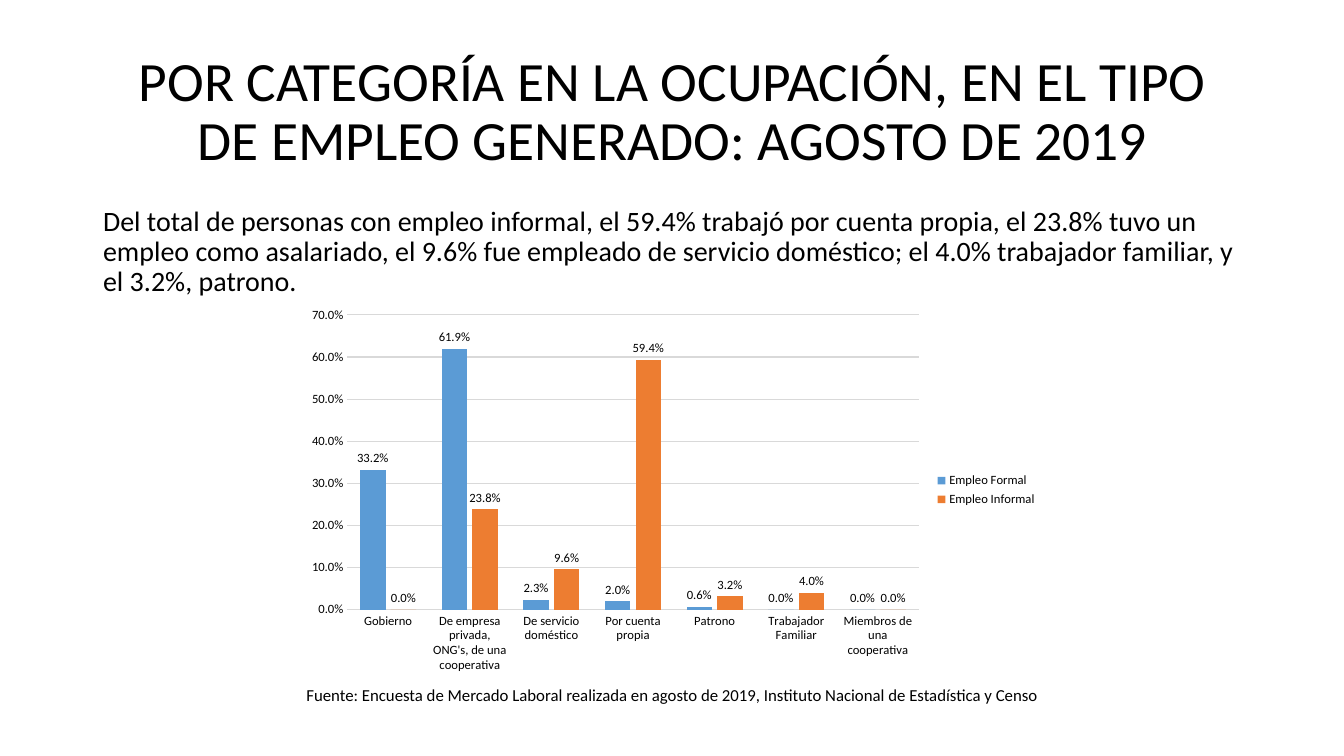
from pptx import Presentation
from pptx.chart.data import CategoryChartData
from pptx.dml.color import RGBColor
from pptx.enum.chart import XL_CHART_TYPE, XL_LABEL_POSITION, XL_LEGEND_POSITION, XL_TICK_MARK
from pptx.enum.text import MSO_ANCHOR, MSO_AUTO_SIZE, PP_ALIGN
from pptx.oxml.ns import qn
from pptx.util import Pt

COLUMNS = XL_CHART_TYPE.COLUMN_CLUSTERED
OUTSIDE = XL_LABEL_POSITION.OUTSIDE_END
RIGHT = XL_LEGEND_POSITION.RIGHT
NO_TICK = XL_TICK_MARK.NONE
TOP, MIDDLE = MSO_ANCHOR.TOP, MSO_ANCHOR.MIDDLE
NO_FIT = MSO_AUTO_SIZE.NONE
LEFT, CENTER = PP_ALIGN.LEFT, PP_ALIGN.CENTER

PX = 12192000 / 1344
THEME = {
    "font": "Calibri",
    "ink": RGBColor(0, 0, 0),
    "grid": RGBColor(0xD9, 0xD9, 0xD9),
    "bars": [RGBColor(0x5B, 0x9B, 0xD5), RGBColor(0xED, 0x7D, 0x31)],
    "title": 39.6, "body": 20, "source": 12, "chart": 10, "label": 9,
}
PERCENT = "0.0%"

GROUPS = ["Gobierno", "De empresa privada, ONG's, de una cooperativa",
          "De servicio doméstico", "Por cuenta propia", "Patrono",
          "Trabajador Familiar", "Miembros de una cooperativa"]
JOBS = {
    "Empleo Formal": [0.332, 0.619, 0.023, 0.02, 0.006, 0, 0],
    "Empleo Informal": [0, 0.238, 0.096, 0.594, 0.032, 0.04, 0],
}


def style(font, size):
    font.name, font.size = THEME["font"], Pt(THEME[size])
    font.color.rgb = THEME["ink"]


def assign(target, values):
    for name, value in values.items():
        setattr(target, name, value)


deck = Presentation()
assign(deck, {"slide_width": round(1344 * PX), "slide_height": round(756 * PX)})
slide = deck.slides.add_slide(deck.slide_layouts[1])
title, body = slide.shapes.title, slide.placeholders[1]
source = slide.shapes.add_textbox(0, 0, 0, 0)

# Text
texts = [
    (title, "title", (93, 40, 1159, 146), MIDDLE, True,
     {"alignment": CENTER, "line_spacing": 0.9, "space_before": Pt(0)},
     "POR CATEGORÍA EN LA OCUPACIÓN, EN EL TIPO DE EMPLEO GENERADO: AGOSTO DE 2019"),
    (body, "body", (93, 202, 1159, 480), TOP, True,
     {"alignment": LEFT, "line_spacing": 0.9, "space_before": Pt(10)},
     "Del total de personas con empleo informal, el 59.4% trabajó por cuenta propia, "
     "el 23.8% tuvo un empleo como asalariado, el 9.6% fue empleado de servicio doméstico; "
     "el 4.0% trabajador familiar, y el 3.2%, patrono."),
    (source, "source", (295, 680, 755, 30), TOP, False,
     {"alignment": CENTER},
     "Fuente: Encuesta de Mercado Laboral realizada en agosto de 2019, "
     "Instituto Nacional de Estadística y Censo"),
]
for shape, size, box, anchor, wrap, layout, words in texts:
    assign(shape, dict(zip(("left", "top", "width", "height"),
                           (round(n * PX) for n in box))))
    frame = shape.text_frame
    assign(frame, {"auto_size": NO_FIT, "word_wrap": wrap, "vertical_anchor": anchor})
    para = frame.paragraphs[0]
    assign(para, layout)
    run = para.add_run()
    run.text = words
    style(run.font, size)

# The body is a plain paragraph without a bullet
props = body.text_frame.paragraphs[0]._p.get_or_add_pPr()
props.set("marL", "0")
props.set("indent", "0")
props.append(props.makeelement(qn("a:buNone"), {}))

# Chart
data = CategoryChartData(number_format=PERCENT)
data.categories = GROUPS
for name, shares in JOBS.items():
    data.add_series(name, shares)
chart = slide.shapes.add_chart(
    COLUMNS, *(round(n * PX) for n in (297, 300, 750, 380)), data).chart
assign(chart, {"has_title": False, "has_legend": True})
style(chart.font, "chart")
assign(chart.legend, {"position": RIGHT, "include_in_layout": False})
style(chart.legend.font, "label")

plot = chart.plots[0]
assign(plot, {"gap_width": 100, "overlap": -20, "vary_by_categories": False})
for series, color in zip(plot.series, THEME["bars"]):
    series.format.fill.solid()
    series.format.fill.fore_color.rgb = color
    labels = series.data_labels
    assign(labels, {"show_value": True, "number_format": PERCENT,
                    "number_format_is_linked": False, "position": OUTSIDE})
    style(labels.font, "label")

groups, shares = chart.category_axis, chart.value_axis
for axis in (groups, shares):
    assign(axis, {"major_tick_mark": NO_TICK, "minor_tick_mark": NO_TICK})
    style(axis.tick_labels.font, "label")
assign(shares, {"minimum_scale": 0, "maximum_scale": 0.7, "major_unit": 0.1,
                "has_major_gridlines": True})
assign(shares.tick_labels, {"number_format": PERCENT, "number_format_is_linked": False})
shares.format.line.fill.background()
for line in (groups.format.line, shares.major_gridlines.format.line):
    line.color.rgb = THEME["grid"]
    line.width = Pt(0.75)

deck.save("out.pptx")
